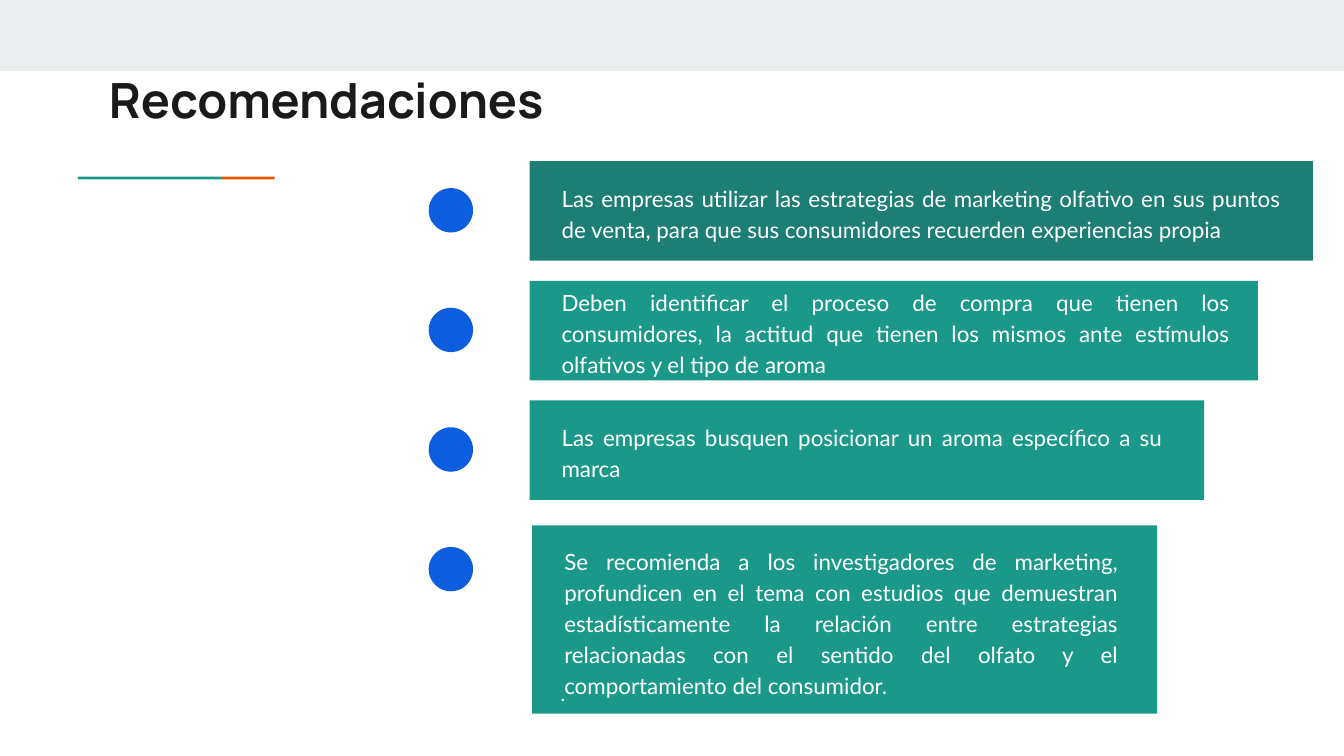
from dataclasses import dataclass

from pptx import Presentation
from pptx.dml.color import RGBColor
from pptx.enum.shapes import MSO_SHAPE as Preset
from pptx.enum.text import MSO_ANCHOR as Anchor, PP_ALIGN as Align
from pptx.util import Emu, Pt

PX = 4572


@dataclass(frozen=True)
class Theme:
    """Colours, fonts and type sizes of the slide."""

    band: str = "E9EDEE"
    teal: str = "1A9988"
    dark_teal: str = "1D7E74"
    orange: str = "EB5600"
    blue: str = "0D5DDF"
    ink: str = "1A1A1A"
    white: str = "FFFFFF"
    title_font: str = "Manrope"
    body_font: str = "Lato"
    mark_font: str = "Roboto"
    title_size: int = 26
    body_size: int = 12


@dataclass(frozen=True)
class Card:
    """A recommendation, its box, and its text area relative to that box."""

    box: tuple
    text_box: tuple
    color: str
    text: str


THEME = Theme()

CARDS = [
    Card((788, 240, 1166, 148), (28, 18, 1110, 116), THEME.dark_teal,
         "Las empresas utilizar las estrategias de marketing olfativo en sus puntos "
         "de venta, para que sus consumidores recuerden experiencias propia"),
    Card((788, 418, 1084, 148), (28, 42, 1034, 66), THEME.teal,
         "Deben identificar el proceso de compra que tienen los consumidores, "
         "la actitud que tienen los mismos ante estímulos olfativos y el tipo de aroma"),
    Card((788, 596, 1004, 148), (28, 42, 934, 66), THEME.teal,
         "Las empresas busquen posicionar un aroma específico a su marca"),
    Card((792, 782, 930, 280), (28, 80, 864, 126), THEME.teal,
         "Se recomienda a los investigadores de marketing, profundicen en el tema "
         "con estudios que demuestran estadísticamente la relación entre estrategias "
         "relacionadas con el sentido del olfato y el comportamiento del consumidor."),
]


def scale(box):
    """Turn a box in px into EMU lengths."""
    return [Emu(length * PX) for length in box]


def add_block(slide, preset, box, color):
    """Add a plain filled shape without outline or shadow."""
    shape = slide.shapes.add_shape(preset, *scale(box))
    shape.shadow.inherit = False
    shape.fill.solid()
    shape.fill.fore_color.rgb = RGBColor.from_string(color)
    shape.line.fill.background()


def add_run(paragraph, text, font, size, color, bold=False):
    """Add one formatted run to a paragraph."""
    run = paragraph.add_run()
    run.text = text
    run.font.name = font
    run.font.size = Pt(size)
    run.font.bold = bold
    run.font.color.rgb = RGBColor.from_string(color)


def set_insets(frame, horizontal, vertical):
    """Set the inner margins of a text frame in px."""
    frame.margin_left = frame.margin_right = Emu(horizontal * PX)
    frame.margin_top = frame.margin_bottom = Emu(vertical * PX)


def add_text(slide, box, text, font, align):
    """Add a vertically centred white text box."""
    frame = slide.shapes.add_textbox(*scale(box)).text_frame
    frame.word_wrap = True
    frame.vertical_anchor = Anchor.MIDDLE
    set_insets(frame, 20, 10)
    paragraph = frame.paragraphs[0]
    paragraph.alignment = align
    paragraph.line_spacing = 1.15
    add_run(paragraph, text, font, THEME.body_size, THEME.white)


def add_header(slide, box):
    """Add the top band, the title and the two-colour accent line."""
    left, top, width, height = box
    add_block(slide, Preset.RECTANGLE, box, THEME.band)
    add_block(slide, Preset.RECTANGLE, (left + 116, top + 263, 213, 4), THEME.teal)
    add_block(slide, Preset.RECTANGLE, (left + 329, top + 263, 80, 4), THEME.orange)

    title = slide.shapes.title
    title.left, title.top, title.width, title.height = scale(
        (left + 142, top + 90, 1716, 108))
    frame = title.text_frame
    frame.word_wrap = True
    frame.vertical_anchor = Anchor.TOP
    set_insets(frame, 20, 20)
    paragraph = frame.paragraphs[0]
    paragraph.alignment = Align.LEFT
    paragraph.line_spacing = 0.95
    add_run(paragraph, "Recomendaciones", THEME.title_font, THEME.title_size,
            THEME.ink, bold=True)


def add_card(slide, card):
    """Add a coloured card with its justified text."""
    left, top, width, height = card.box
    dx, dy, text_width, text_height = card.text_box
    add_block(slide, Preset.RECTANGLE, card.box, card.color)
    add_text(slide, (left + dx, top + dy, text_width, text_height),
             card.text, THEME.body_font, Align.JUSTIFY)


def add_dots(slide, box, count, pitch):
    """Add a column of round markers at equal steps from the first box."""
    left, top, width, height = box
    for index in range(count):
        add_block(slide, Preset.OVAL, (left, top + index * pitch, width, height),
                  THEME.blue)


def main():
    """Build and save the recommendations slide."""
    presentation = Presentation()
    presentation.slide_width, presentation.slide_height = scale((2000, 1125))
    slide = presentation.slides.add_slide(presentation.slide_layouts[5])
    add_header(slide, (0, 0, 2000, 106))
    for card in CARDS:
        add_card(slide, card)
    add_text(slide, (814, 994, 780, 66), ".", THEME.mark_font, Align.LEFT)
    add_dots(slide, (638, 280, 66, 66), len(CARDS), 178)
    presentation.save("out.pptx")


if __name__ == "__main__":
    main()
